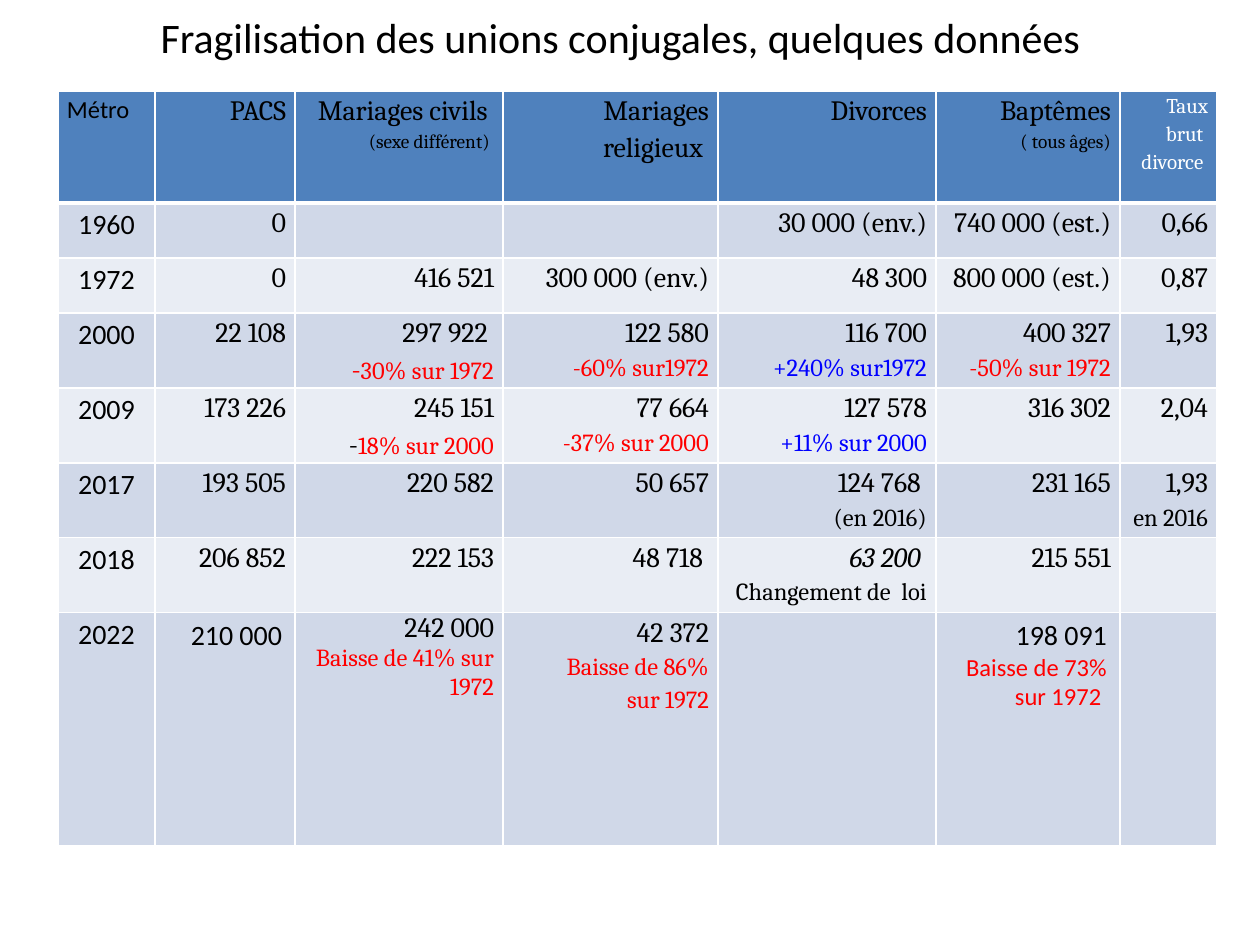
from dataclasses import dataclass

from lxml import etree
from pptx import Presentation
from pptx.dml.color import RGBColor
from pptx.enum.text import MSO_ANCHOR, PP_ALIGN
from pptx.oxml.ns import qn
from pptx.util import Emu, Pt

LEFT, CENTER, RIGHT = PP_ALIGN.LEFT, PP_ALIGN.CENTER, PP_ALIGN.RIGHT
MIDDLE = MSO_ANCHOR.MIDDLE
TITLE_ONLY = 5
EMU_PER_PX = 914400 / 126


@dataclass(frozen=True)
class Theme:
    sans: str = "Calibri"
    serif: str = "Cambria"
    black: str = "000000"
    white: str = "FFFFFF"
    fall: str = "FF0000"
    rise: str = "0000FF"
    header: str = "4F81BD"
    bands: tuple = ("D0D8E8", "E9EDF4")
    title: int = 24
    value: int = 16
    note: int = 14
    rate: int = 12
    detail: int = 11
    spacing: float = 1.15


THEME = Theme()


@dataclass(frozen=True)
class Run:
    text: str
    size: int = THEME.value
    color: str = THEME.black
    font: str = THEME.serif
    italic: bool = False


@dataclass(frozen=True)
class Entry:
    """Content of one cell: each line is a Run or a list of Runs."""
    lines: tuple
    align: int = RIGHT
    spacing: float = THEME.spacing
    margins: tuple = (9, 0)


def px(length):
    return Emu(round(length * EMU_PER_PX))


def value(text):
    return Run(text)


def note(text, color=THEME.black):
    return Run(text, THEME.note, color)


def fall(text):
    return note(text, THEME.fall)


def rise(text):
    return note(text, THEME.rise)


def detail(text):
    return Run(text, THEME.detail)


def year(text):
    return Entry((Run(text, font=THEME.sans),), CENTER)


def sans_entry(*lines):
    """A single-spaced sans-serif cell with wider margins."""
    return Entry(lines, spacing=1.0, margins=(13, 6))


TITLE = "Fragilisation des unions conjugales, quelques données"
COLUMN_WIDTHS = (97, 140, 208, 215, 218, 184, 97)
ROW_HEIGHTS = (112, 55, 55, 75, 75, 75, 75, 233)

# A string is a plain value, a tuple is a cell of several lines.
HEADER = [
    Entry((Run("Métro", THEME.note, font=THEME.sans),), LEFT),
    "PACS",
    (value("Mariages civils "), detail("(sexe différent) ")),
    "Mariages religieux ",
    "Divorces",
    (value("Baptêmes"), detail("( tous âges)")),
    (Run("Taux brut  divorce ", THEME.rate, THEME.white),),
]
YEARS = [
    ["1960", "0", "", "", "30 000 (env.)", "740 000 (est.)", "0,66"],
    ["1972", "0", "416 521", "300 000 (env.)", "48 300", "800 000 (est.)", "0,87"],
    ["2000", "22 108",
     (value("297 922 "), [Run("-", color=THEME.fall), fall("30% sur 1972")]),
     (value("122 580"), fall("-60% sur1972")),
     (value("116 700"), rise("+240% sur1972")),
     (value("400 327"), fall("-50% sur 1972")), "1,93"],
    ["2009", "173 226",
     (value("245 151"), [value("-"), fall("18% sur 2000")]),
     (value("77 664"), fall("-37% sur 2000")),
     (value("127 578"), rise("+11% sur 2000")), "316 302", "2,04"],
    ["2017", "193 505", "220 582", "50 657",
     (value("124 768 "), note("(en 2016)")), "231 165",
     (value("1,93"), note("en 2016"))],
    ["2018", "206 852", "222 153", "48 718 ",
     (Run("63 200 ", italic=True), note("Changement de  loi")), "215 551", ""],
    ["2022", sans_entry(Run("210 000", font=THEME.sans)),
     Entry((value("242 000"), fall("Baisse de 41% sur 1972")), spacing=1.0),
     (value("42 372"), fall("Baisse de 86%"), fall("sur 1972")), "",
     sans_entry(Run("198 091", font=THEME.sans),
                Run("Baisse de 73% sur 1972 ", THEME.note, THEME.fall, THEME.sans)),
     ""],
]


def add_run(paragraph, content):
    run = paragraph.add_run()
    run.text = content.text
    font = run.font
    font.size = Pt(content.size)
    font.name = content.font
    font.color.rgb = RGBColor.from_string(content.color)
    font.bold = False
    font.italic = content.italic


def as_entry(content):
    if isinstance(content, Entry):
        return content
    if isinstance(content, str):
        content = (value(content),) if content else ()
    return Entry(content)


def set_borders(cell, bottom_width):
    properties = cell._tc.get_or_add_tcPr()
    for side, width in (("L", 1), ("R", 1), ("T", 1), ("B", bottom_width)):
        line = etree.SubElement(properties, qn(f"a:ln{side}"), w=str(Pt(width)))
        fill = etree.SubElement(line, qn("a:solidFill"))
        etree.SubElement(fill, qn("a:srgbClr"), val=THEME.white)


def fill_cell(cell, entry, color, bottom_width):
    set_borders(cell, bottom_width)
    cell.fill.solid()
    cell.fill.fore_color.rgb = RGBColor.from_string(color)
    side, edge = entry.margins
    cell.margin_left = cell.margin_right = px(side)
    cell.margin_top = cell.margin_bottom = px(edge)
    for index, line in enumerate(entry.lines):
        frame = cell.text_frame
        paragraph = frame.add_paragraph() if index else frame.paragraphs[0]
        paragraph.alignment = entry.align
        paragraph.line_spacing = entry.spacing
        for run in line if isinstance(line, list) else [line]:
            add_run(paragraph, run)


def add_title(slide):
    title = slide.shapes.title
    title.left, title.top, title.width, title.height = map(px, (63, -2, 1115, 77))
    frame = title.text_frame
    frame.word_wrap = True
    frame.vertical_anchor = MIDDLE
    frame.paragraphs[0].alignment = CENTER
    add_run(frame.paragraphs[0], Run(TITLE, THEME.title, font=THEME.sans))


def add_union_table(slide):
    rows = [HEADER] + [[year(label), *figures] for label, *figures in YEARS]
    table = slide.shapes.add_table(
        len(rows), len(COLUMN_WIDTHS), px(58), px(91),
        px(sum(COLUMN_WIDTHS)), px(sum(ROW_HEIGHTS))).table
    table.first_row = table.horz_banding = False
    for column, width in zip(table.columns, COLUMN_WIDTHS):
        column.width = px(width)
    for row, height in zip(table.rows, ROW_HEIGHTS):
        row.height = px(height)
    for r, contents in enumerate(rows):
        color = THEME.bands[(r - 1) % 2] if r else THEME.header
        for c, content in enumerate(contents):
            fill_cell(table.cell(r, c), as_entry(content), color, 1 if r else 3)


def main():
    deck = Presentation()
    deck.slide_width, deck.slide_height = px(1260), px(945)
    slide = deck.slides.add_slide(deck.slide_layouts[TITLE_ONLY])
    add_title(slide)
    add_union_table(slide)
    deck.save("out.pptx")


if __name__ == "__main__":
    main()
